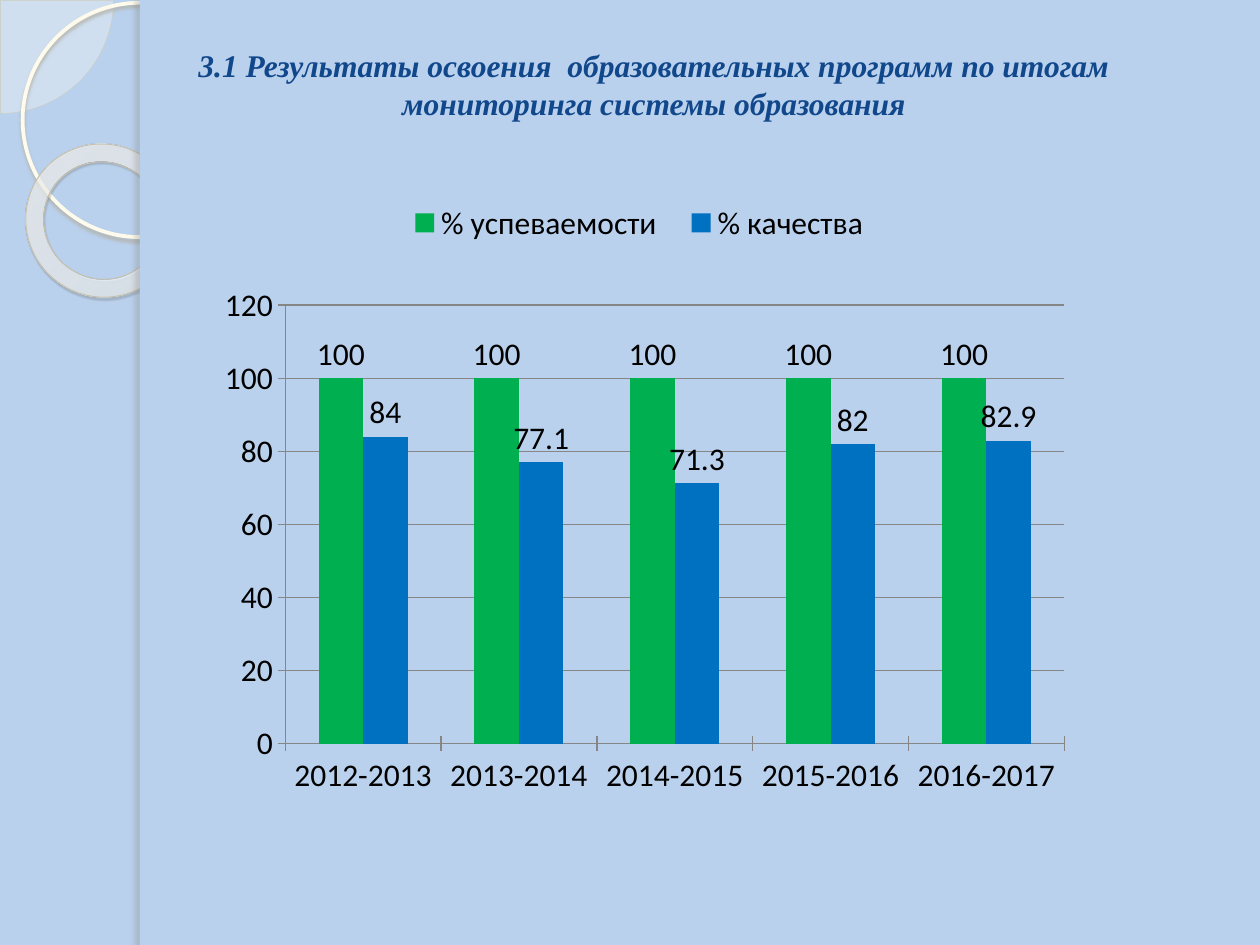
from dataclasses import dataclass

from lxml import etree
from pptx import Presentation
from pptx.chart.data import CategoryChartData
from pptx.dml.color import RGBColor
from pptx.enum.chart import XL_CHART_TYPE, XL_LABEL_POSITION, XL_LEGEND_POSITION, XL_TICK_MARK
from pptx.enum.shapes import MSO_SHAPE
from pptx.enum.text import MSO_ANCHOR, MSO_AUTO_SIZE, PP_ALIGN
from pptx.oxml import parse_xml
from pptx.oxml.ns import nsdecls, qn
from pptx.util import Inches, Pt

PIE, ELLIPSE, DONUT, RECTANGLE = (
    MSO_SHAPE.PIE, MSO_SHAPE.OVAL, MSO_SHAPE.DONUT, MSO_SHAPE.RECTANGLE)
COLUMNS = XL_CHART_TYPE.COLUMN_CLUSTERED
LEGEND_TOP = XL_LEGEND_POSITION.TOP
LABEL_OUTSIDE = XL_LABEL_POSITION.OUTSIDE_END
TICK_CROSS, TICK_NONE = XL_TICK_MARK.CROSS, XL_TICK_MARK.NONE
CENTER, MIDDLE = PP_ALIGN.CENTER, MSO_ANCHOR.MIDDLE
NO_AUTOFIT = MSO_AUTO_SIZE.NONE

WIDTH, HEIGHT = 10, 7.5
PANEL_LEFT = 0.111


@dataclass(frozen=True)
class Theme:
    background: str = "BAD1ED"
    title: str = "11478B"
    text: str = "000000"
    grid: str = "868686"
    passed: str = "00B050"
    quality: str = "0070C0"
    pie: str = "FDFDF9"
    pie_line: str = "D1CEBB"
    ring: str = "FEFBEC"
    ring_shadow: str = "B2B0A4"
    donut_line: str = "C5C1AE"
    donut_stops: tuple = ((0, "FEFDFA", 70), (70, "FFFFFC", 55), (100, "E2DBB7", 60))
    donut_shadow: str = "5A5850"
    edge_shadow: str = "77756F"
    title_font: str = "Times New Roman"
    chart_font: str = "Calibri"
    size: int = 18


def color_xml(color, alpha):
    return f'<a:srgbClr val="{color}"><a:alpha val="{alpha * 1000}"/></a:srgbClr>'


class SlideBuilder:
    def __init__(self, presentation, theme):
        self.theme = theme
        self.slide = presentation.slides.add_slide(presentation.slide_layouts[5])
        self.paint(self.slide.background.fill, theme.background)

    def box(self, left, top, width, height):
        return (Inches(left * WIDTH), Inches(top * HEIGHT),
                Inches(width * WIDTH), Inches(height * HEIGHT))

    def paint(self, fill, color):
        fill.solid()
        fill.fore_color.rgb = RGBColor.from_string(color)

    def stroke(self, line, color, width):
        self.paint(line.fill, color)
        line.width = Pt(width)

    def style_font(self, font, name, color):
        font.name = name
        font.size = Pt(self.theme.size)
        font.color.rgb = RGBColor.from_string(color)

    def ornament(self, kind, place, fill=None, line=None, adjustments=(), rotation=0):
        shape = self.slide.shapes.add_shape(kind, *self.box(*place))
        shape.shadow.inherit = False
        shape.rotation = rotation
        for index, value in enumerate(adjustments):
            shape.adjustments[index] = value
        if fill:
            self.paint(shape.fill, fill)
        else:
            shape.fill.background()
        if line:
            self.stroke(shape.line, *line)
        else:
            shape.line.fill.background()
        return shape

    def fade(self, shape, alpha):
        color = shape.element.spPr.find(qn("a:solidFill"))[0]
        etree.SubElement(color, qn("a:alpha"), val=str(alpha * 1000))

    def radial(self, shape, stops):
        stops_xml = "".join(f'<a:gs pos="{position * 1000}">{color_xml(color, alpha)}</a:gs>'
                            for position, color, alpha in stops)
        gradient = parse_xml(
            f'<a:gradFill {nsdecls("a")}><a:gsLst>{stops_xml}</a:gsLst><a:path path="circle">'
            '<a:fillToRect l="-408000" t="-50000" r="508000" b="150000"/></a:path></a:gradFill>')
        properties = shape.element.spPr
        properties.replace(properties.find(qn("a:noFill")), gradient)

    def shadow(self, shape, color, alpha, blur, distance, angle):
        effects = shape.element.spPr.find(qn("a:effectLst"))
        effects.append(parse_xml(
            f'<a:outerShdw {nsdecls("a")} blurRad="{Pt(blur)}" dist="{Pt(distance)}" '
            f'dir="{angle * 60000}" algn="tl" rotWithShape="0">{color_xml(color, alpha)}'
            '</a:outerShdw>'))

    def title(self, text, place):
        title = self.slide.shapes.title
        title.left, title.top, title.width, title.height = self.box(*place)
        frame = title.text_frame
        frame.word_wrap = True
        frame.auto_size = NO_AUTOFIT
        frame.vertical_anchor = MIDDLE
        paragraph = frame.paragraphs[0]
        paragraph.alignment = CENTER
        run = paragraph.add_run()
        run.text = text
        self.style_font(run.font, self.theme.title_font, self.theme.title)
        run.font.bold = run.font.italic = True
        title.element.getparent().append(title.element)

    def layout(self, element, x, y, w, h, inner=False):
        for previous in element.findall(qn("c:layout")):
            element.remove(previous)
        target = '<c:layoutTarget val="inner"/>' if inner else ""
        modes = "".join(f'<c:{axis}Mode val="edge"/>' for axis in "xy")
        values = "".join(f'<c:{name} val="{value}"/>'
                         for name, value in zip("xywh", (x, y, w, h)))
        return parse_xml(f'<c:layout {nsdecls("c")}><c:manualLayout>{target}{modes}{values}'
                         '</c:manualLayout></c:layout>')

    def column_chart(self, categories, series, place, plot_place, legend_place):
        theme = self.theme
        data = CategoryChartData()
        data.categories = categories
        for name, values, _ in series:
            data.add_series(name, values)
        chart = self.slide.shapes.add_chart(COLUMNS, *self.box(*place), data).chart
        chart.has_title = False
        self.style_font(chart.font, theme.chart_font, theme.text)

        plot = chart.plots[0]
        plot.gap_width, plot.overlap = 150, 0
        plot.vary_by_categories = False
        for column, (_, _, color) in zip(plot.series, series):
            self.paint(column.format.fill, color)
            labels = column.data_labels
            labels.show_value = True
            labels.position = LABEL_OUTSIDE
            self.style_font(labels.font, theme.chart_font, theme.text)

        values_axis = chart.value_axis
        values_axis.minimum_scale, values_axis.maximum_scale = 0, 120
        values_axis.major_unit = 20
        self.stroke(values_axis.major_gridlines.format.line, theme.grid, 0.75)
        for axis in (chart.category_axis, values_axis):
            axis.major_tick_mark, axis.minor_tick_mark = TICK_CROSS, TICK_NONE
            self.stroke(axis.format.line, theme.grid, 0.75)

        chart.has_legend = True
        legend = chart.legend
        legend.position = LEGEND_TOP
        legend.include_in_layout = False
        self.style_font(legend.font, theme.chart_font, theme.text)
        area = chart.element.find(".//" + qn("c:plotArea"))
        area.insert(0, self.layout(area, *plot_place, inner=True))
        key = chart.element.find(".//" + qn("c:legend"))
        key.insert(1, self.layout(key, *legend_place))


def main():
    presentation = Presentation()
    presentation.slide_width, presentation.slide_height = Inches(WIDTH), Inches(HEIGHT)
    theme = Theme()
    builder = SlideBuilder(presentation, theme)

    pie = builder.ornament(PIE, (-0.089, -0.119, 0.179, 0.239), theme.pie,
                           (theme.pie_line, 0.25), (0, 54))
    builder.fade(pie, 33)
    ring = builder.ornament(ELLIPSE, (0.018, 0.003, 0.186, 0.248), line=(theme.ring, 2.15))
    builder.shadow(ring, theme.ring_shadow, 85, 2, 2, 90)
    donut = builder.ornament(DONUT, (0.02, 0.153, 0.123, 0.161), line=(theme.donut_line, 0.58),
                             adjustments=(0.118,), rotation=38.6)
    builder.radial(donut, theme.donut_stops)
    builder.shadow(donut, theme.donut_shadow, 35, 1, 1.2, 75)
    builder.ornament(RECTANGLE, (PANEL_LEFT, 0, 1 - PANEL_LEFT, 1), theme.background)
    edge = builder.ornament(RECTANGLE, (PANEL_LEFT, 0, 0.008, 1), theme.background)
    builder.shadow(edge, theme.edge_shadow, 25, 3, 3, 180)

    builder.title("3.1 Результаты освоения  образовательных программ по итогам "
                  "мониторинга системы образования", (0.109, 0.041, 0.82, 0.096))
    builder.column_chart(
        [f"{year}-{year + 1}" for year in range(2012, 2017)],
        [("% успеваемости", [100] * 5, theme.passed),
         ("% качества", (84, 77.1, 71.3, 82, 82.9), theme.quality)],
        (0.125, 0.188, 0.805, 0.737),
        plot_place=(0.126, 0.183, 0.768, 0.63),
        legend_place=(0.23, 0.03, 0.49, 0.07))
    presentation.save("out.pptx")


if __name__ == "__main__":
    main()
